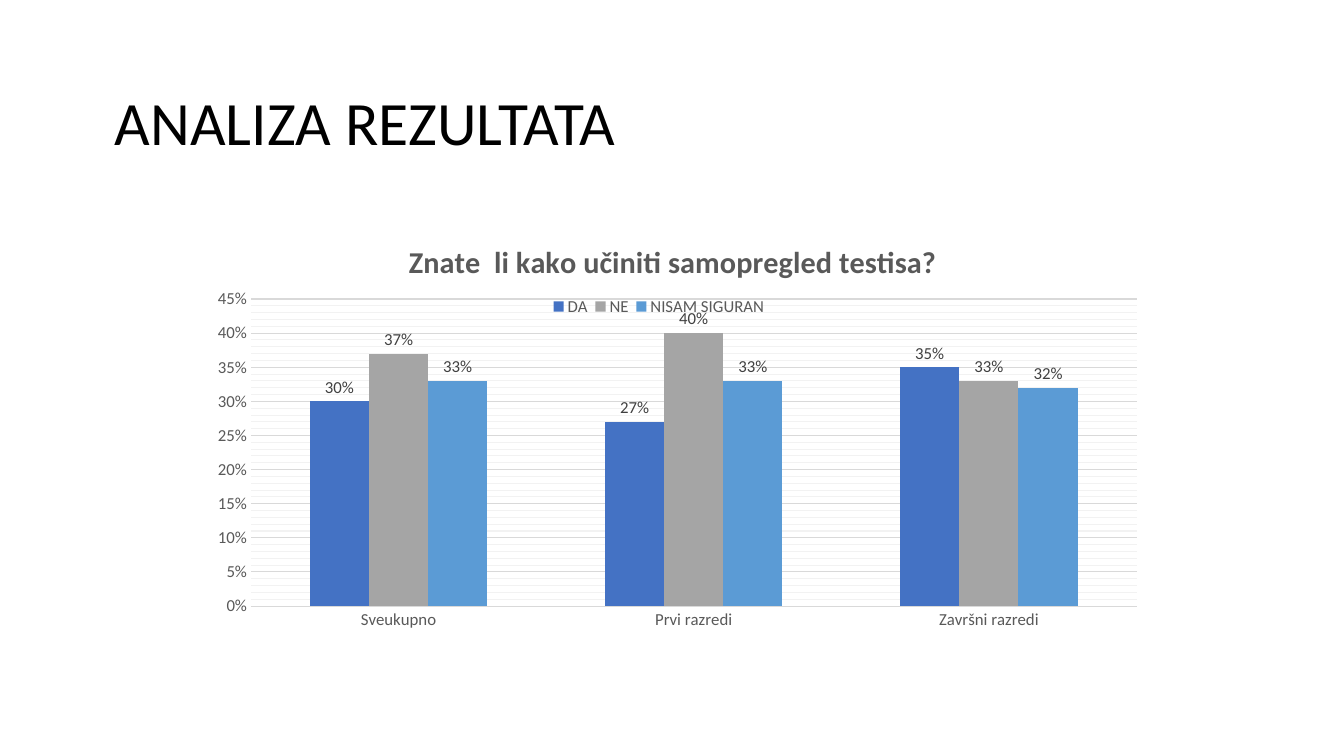
from dataclasses import dataclass

from lxml import etree
from pptx import Presentation, util as u
from pptx.chart import data as cd
from pptx.dml import color
from pptx.enum import chart as ce, text
from pptx.oxml import ns

TITLE = "ANALIZA REZULTATA"
ASK = "Znate  li kako učiniti samopregled testisa?"
CATS = ("Sveukupno", "Prvi razredi", "Završni razredi")
ROWS = (
    ("DA", (0.30, 0.27, 0.35), "4472C4"),
    ("NE", (0.37, 0.40, 0.33), "A5A5A5"),
    ("NISAM SIGURAN", (0.33, 0.33, 0.32), "5B9BD5"),
)
# Left, top, width and height in cm
TITLE_BOX = (2.64, 1.32, 29.21, 3.68)
CHART_BOX = (4.22, 5.59, 24.77, 11.38)
# Shares of the chart's width and height
PARTS = {
    "title": {"x": 0.24, "y": 0.03},
    "legend": {"x": 0.385, "y": 0.165, "w": 0.23, "h": 0.045},
    "plotArea": {"x": 0.085, "y": 0.171, "w": 0.901, "h": 0.68},
}
SCALE = {"minimum_scale": 0, "maximum_scale": 0.45,
         "major_unit": 0.05, "minor_unit": 0.01}


@dataclass(frozen=True)
class Theme:
    face: str = "Calibri"
    ink: str = "000000"
    grey: str = "595959"
    label: str = "404040"
    grid: str = "D9D9D9"
    faint: str = "F2F2F2"
    head: float = 44
    ask: float = 21.6
    small: float = 12


T = Theme()


def apply(obj, vals):
    for key, val in vals.items():
        setattr(obj, key, val)


def style(font, size, tint, bold=False):
    apply(font, {"name": T.face, "size": u.Pt(size), "bold": bold})
    font.color.rgb = color.RGBColor.from_string(tint)


def rule(line, tint):
    line.color.rgb = color.RGBColor.from_string(tint)
    line.width = u.Pt(0.75)


def place(chart, name, vals):
    """Give one part of the chart a fixed place, by shares of its size."""
    part = next(chart.element.iter(ns.qn("c:" + name)))
    for old in part.findall(ns.qn("c:layout")):
        part.remove(old)
    lay = etree.Element(ns.qn("c:layout"))
    man = etree.SubElement(lay, ns.qn("c:manualLayout"))
    modes = {"xMode": "edge", "yMode": "edge"}
    if name == "plotArea":
        modes = {"layoutTarget": "inner", **modes}
    for key, val in {**modes, **vals}.items():
        etree.SubElement(man, ns.qn("c:" + key), val=str(val))
    part.insert(0 if name == "plotArea" else 1, lay)


def add_title(slide):
    head = slide.shapes.title
    apply(head, dict(zip(("left", "top", "width", "height"),
                         map(u.Cm, TITLE_BOX))))
    frame = head.text_frame
    frame.text = TITLE
    apply(frame, {"vertical_anchor": text.MSO_ANCHOR.MIDDLE,
                  "word_wrap": True, "auto_size": text.MSO_AUTO_SIZE.NONE})
    para = frame.paragraphs[0]
    apply(para, {"alignment": text.PP_ALIGN.LEFT, "line_spacing": 0.9})
    style(para.runs[0].font, T.head, T.ink)


def add_bars(slide):
    data = cd.CategoryChartData(number_format="0%")
    data.categories = CATS
    for name, vals, _ in ROWS:
        data.add_series(name, vals)
    chart = slide.shapes.add_chart(ce.XL_CHART_TYPE.COLUMN_CLUSTERED,
                                   *map(u.Cm, CHART_BOX), data).chart
    style(chart.font, T.small, T.grey)
    chart.has_title = True
    ask = chart.chart_title.text_frame
    ask.text = ASK
    style(ask.paragraphs[0].runs[0].font, T.ask, T.grey, True)

    chart.has_legend = True
    apply(chart.legend, {"position": ce.XL_LEGEND_POSITION.TOP,
                         "include_in_layout": False})
    style(chart.legend.font, T.small, T.grey)

    cat, val = chart.category_axis, chart.value_axis
    for axis in (cat, val):
        apply(axis, {"major_tick_mark": ce.XL_TICK_MARK.NONE,
                     "minor_tick_mark": ce.XL_TICK_MARK.NONE})
        style(axis.tick_labels.font, T.small, T.grey)
    rule(cat.format.line, T.grid)
    apply(val, {**SCALE, "has_major_gridlines": True,
                "has_minor_gridlines": True})
    apply(val.tick_labels, {"number_format": "0%",
                            "number_format_is_linked": False})
    val.format.line.fill.background()
    rule(val.major_gridlines.format.line, T.grid)
    # python-pptx has no object for minor gridlines
    minor = next(chart.element.iter(ns.qn("c:minorGridlines")))
    props = etree.SubElement(minor, ns.qn("c:spPr"))
    line = etree.SubElement(props, ns.qn("a:ln"), w=str(u.Pt(0.75)))
    fill = etree.SubElement(line, ns.qn("a:solidFill"))
    etree.SubElement(fill, ns.qn("a:srgbClr"), val=T.faint)

    plot = chart.plots[0]
    apply(plot, {"gap_width": 199, "overlap": 0, "vary_by_categories": False})
    for bars, (_, _, tint) in zip(plot.series, ROWS):
        bars.format.fill.solid()
        bars.format.fill.fore_color.rgb = color.RGBColor.from_string(tint)
        tags = bars.data_labels
        apply(tags, {"show_value": True, "number_format": "0%",
                     "number_format_is_linked": False,
                     "position": ce.XL_LABEL_POSITION.OUTSIDE_END})
        style(tags.font, T.small, T.label)
    for name, vals in PARTS.items():
        place(chart, name, vals)


def main():
    deck = Presentation()
    apply(deck, {"slide_width": u.Cm(33.87), "slide_height": u.Cm(19.05)})
    slide = deck.slides.add_slide(deck.slide_layouts[5])
    add_title(slide)
    add_bars(slide)
    deck.save("out.pptx")


if __name__ == "__main__":
    main()
